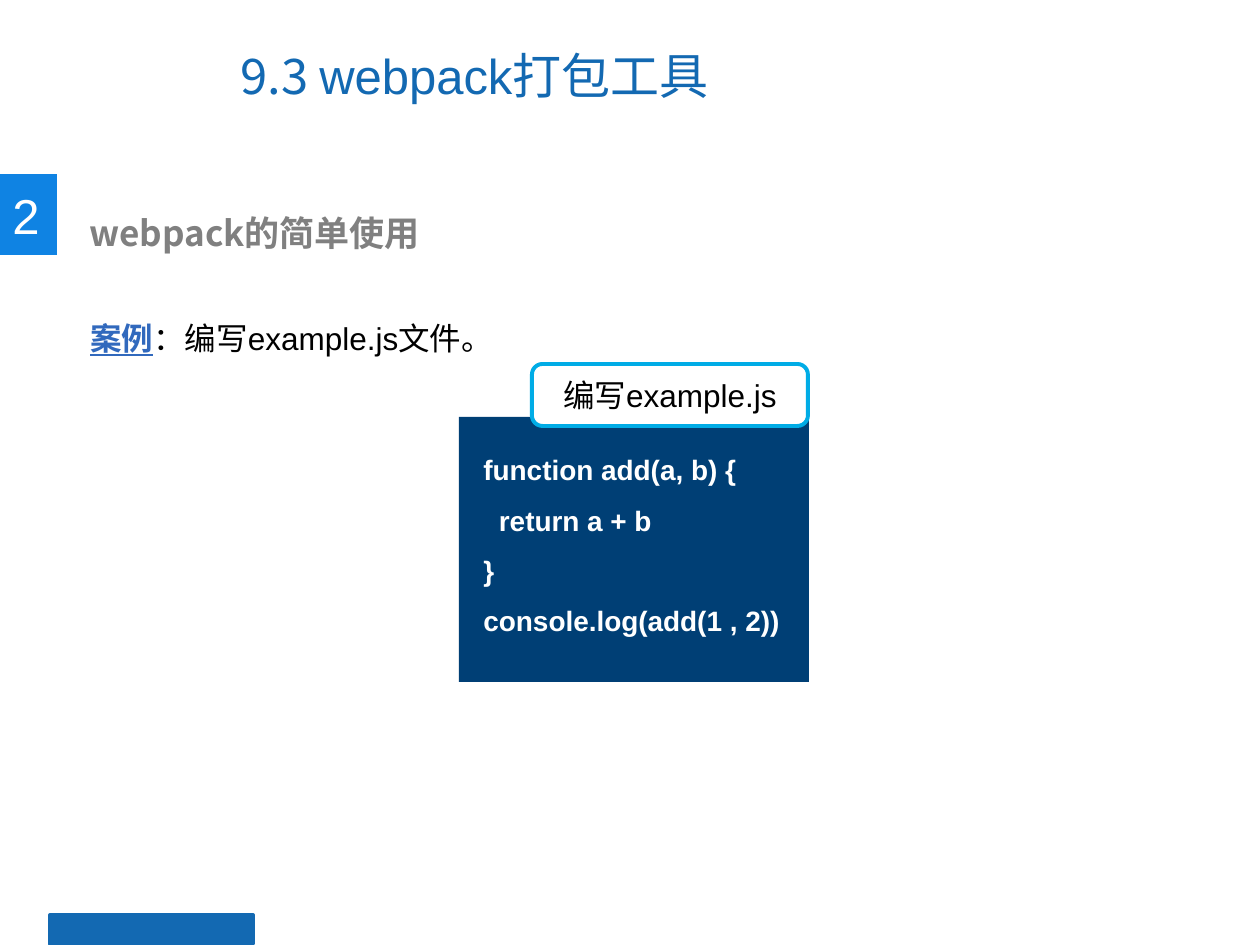
from pptx import Presentation
from pptx.dml.color import RGBColor
from pptx.enum.shapes import MSO_SHAPE
from pptx.enum.text import MSO_ANCHOR, PP_ALIGN
from pptx.oxml.ns import qn
from pptx.util import Emu, Pt

RECTANGLE = MSO_SHAPE.RECTANGLE
ROUNDED = MSO_SHAPE.ROUNDED_RECTANGLE
MIDDLE = MSO_ANCHOR.MIDDLE
CENTER = PP_ALIGN.CENTER

PX = 914400 / 126
LATIN, CJK = "Arial", "Noto Sans CJK SC"
BLUE, BLACK, WHITE, GREY = "1369B2", "000000", "FFFFFF", "808080"
LINK_BLUE, BADGE_BLUE, NAVY, CYAN = "3169BD", "0F83E3", "003F75", "00ACE6"

# Each span: text, font, size, colour, bold, underlined
TITLE = [[("9.3 ", CJK, 28, BLUE, False, False),
          ("webpack", LATIN, 28, BLUE, False, False),
          ("打包工具", CJK, 28, BLUE, False, False)]]
NUMBER = [[("2", LATIN, 28, WHITE, False, False)]]
HEADING = [[("webpack的简单使用", CJK, 20, GREY, True, False)]]
TASK = [[("案例", LATIN, 18, LINK_BLUE, True, True),
         ("：编写example.js文件。", LATIN, 18, BLACK, False, False)]]
CODE_LINES = ["function add(a, b) {", "  return a + b", "}", "console.log(add(1 , 2))"]
CODE = [[(line, LATIN, 16, WHITE, True, False)] for line in CODE_LINES]
FILE_LABEL = [[("编写example.js", LATIN, 18, BLACK, False, False)]]


def px(*lengths):
    return [Emu(round(length * PX)) for length in lengths]


def colour(value):
    return RGBColor.from_string(value)


def write(shape, paragraphs, spacing=None, align=None):
    frame = shape.text_frame
    for index, spans in enumerate(paragraphs):
        para = frame.add_paragraph() if index else frame.paragraphs[0]
        para.line_spacing = spacing
        para.alignment = align
        for text, font, size, ink, bold, underlined in spans:
            span = para.add_run()
            span.text = text
            span.font.name = font
            span.font.size = Pt(size)
            span.font.bold = bold
            span.font.underline = underlined
            span.font.color.rgb = colour(ink)
            east_asian = span.font._element.makeelement(qn("a:ea"), {"typeface": CJK})
            span.font._element.find(qn("a:latin")).addnext(east_asian)


def add_text(page, bounds, paragraphs, spacing=None, wrap=True, anchor=None):
    box = page.shapes.add_textbox(*px(*bounds))
    box.text_frame.word_wrap = wrap
    box.text_frame.vertical_anchor = anchor
    write(box, paragraphs, spacing)


def add_panel(page, kind, bounds, fill, line=None):
    panel = page.shapes.add_shape(kind, *px(*bounds))
    panel.shadow.inherit = False
    panel.fill.solid()
    panel.fill.fore_color.rgb = colour(fill)
    if line:
        panel.line.color.rgb = colour(line)
        panel.line.width = Pt(2.25)
    else:
        panel.line.fill.background()
    return panel


def main():
    deck = Presentation()
    deck.slide_width, deck.slide_height = px(1260, 945)
    page = deck.slides.add_slide(deck.slide_layouts[6])

    add_panel(page, RECTANGLE, (50, 915, 203, 29), BLUE, BLUE)
    add_text(page, (228, 21, 650, 107), TITLE, anchor=MIDDLE)

    add_panel(page, RECTANGLE, (0, 174, 57, 81), BADGE_BLUE)
    add_text(page, (0, 179, 53, 72), NUMBER, wrap=False)
    add_text(page, (77, 205, 630, 55), HEADING)
    add_text(page, (78, 275, 1090, 89), TASK, spacing=2.0)

    add_panel(page, RECTANGLE, (459, 417, 350, 265), NAVY)
    add_text(page, (471, 430, 336, 230), CODE, spacing=1.5)
    label = add_panel(page, ROUNDED, (532, 364, 276, 62), WHITE, CYAN)
    label.adjustments[0] = 0.17
    label.text_frame.vertical_anchor = MIDDLE
    write(label, FILE_LABEL, align=CENTER)

    deck.save("out.pptx")


if __name__ == "__main__":
    main()
